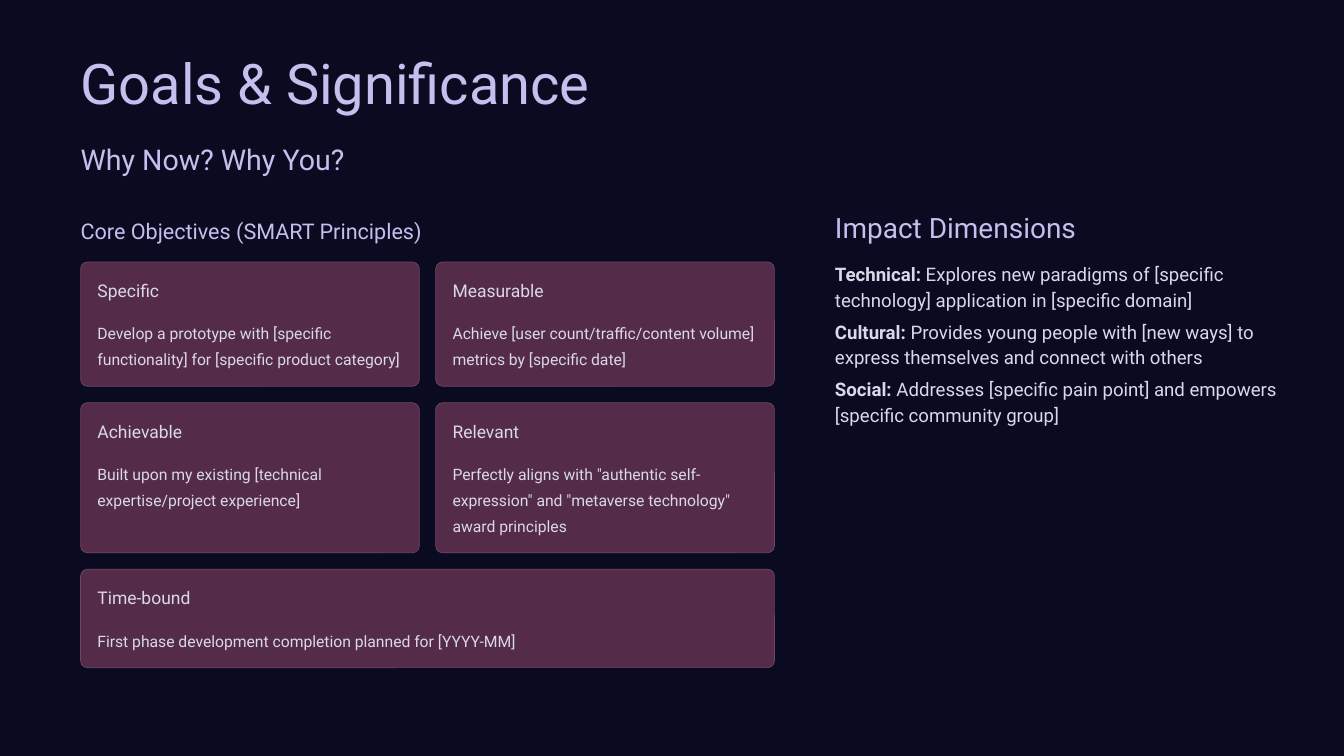
from dataclasses import dataclass

from pptx import Presentation
from pptx.dml.color import RGBColor
from pptx.enum.shapes import MSO_SHAPE
from pptx.enum.text import MSO_ANCHOR, MSO_AUTO_SIZE, PP_ALIGN
from pptx.util import Pt


@dataclass(frozen=True)
class TextStyle:
    size: float
    line: float
    color: RGBColor


@dataclass(frozen=True)
class Theme:
    font = "Roboto"
    background = RGBColor(0x0A, 0x0B, 0x21)
    card_fill = RGBColor(0x54, 0x2C, 0x49)
    card_line = RGBColor(0x6D, 0x45, 0x62)
    accent = RGBColor(0xC6, 0xBF, 0xEE)
    light = RGBColor(0xDA, 0xD8, 0xE9)
    title = TextStyle(48, 38.5, accent)
    subtitle = TextStyle(24.5, 30.5, accent)
    objectives_heading = TextStyle(18.5, 23, accent)
    impact_heading = TextStyle(24, 23, accent)
    card_heading = TextStyle(15, 19, light)
    card_body = TextStyle(13.5, 22, light)
    impact_body = TextStyle(16, 22, light)


THEME = Theme()
LEFT = 69.1
OBJECTIVES_WIDTH = 594.7
CARD_GAP = 14.1
CARD_PADDING = 14.4
CARD_BODY_OFFSET = 47.5
CARD_RADIUS = 5.82
BODY_LINE_HEIGHT = 22.1
CARD_FRAME_HEIGHT = 62.3

OBJECTIVE_ROWS = [
    (2, [
        ("Specific", "Develop a prototype with [specific functionality] for [specific product category]"),
        ("Measurable", "Achieve [user count/traffic/content volume] metrics by [specific date]"),
    ]),
    (3, [
        ("Achievable", "Built upon my existing [technical expertise/project experience]"),
        ("Relevant", 'Perfectly aligns with "authentic self-expression" and "metaverse technology" award principles'),
    ]),
    (1, [("Time-bound", "First phase development completion planned for [YYYY-MM]")]),
]

IMPACTS = [
    ("Technical:", " Explores new paradigms of [specific technology] application in [specific domain]"),
    ("Cultural:", " Provides young people with [new ways] to express themselves and connect with others"),
    ("Social:", " Addresses [specific pain point] and empowers [specific community group]"),
]


def write_paragraphs(shape, paragraphs, style, gap=0):
    frame = shape.text_frame
    frame.word_wrap = True
    frame.auto_size = MSO_AUTO_SIZE.NONE
    frame.vertical_anchor = MSO_ANCHOR.TOP
    frame.margin_left = frame.margin_right = frame.margin_top = frame.margin_bottom = 0
    for index, runs in enumerate(paragraphs):
        paragraph = frame.add_paragraph() if index else frame.paragraphs[0]
        paragraph.alignment = PP_ALIGN.LEFT
        paragraph.line_spacing = Pt(style.line)
        paragraph.space_before = Pt(gap if index else 0)
        for text, bold in runs:
            run = paragraph.add_run()
            run.text = text
            run.font.name = THEME.font
            run.font.size = Pt(style.size)
            run.font.bold = bold
            run.font.color.rgb = style.color


def add_text(slide, left, top, width, height, paragraphs, style, gap=0):
    box = slide.shapes.add_textbox(Pt(left), Pt(top), Pt(width), Pt(height))
    write_paragraphs(box, paragraphs, style, gap)


def add_header(slide, left, top, width):
    title = slide.shapes.title
    title.left, title.top, title.width, title.height = Pt(left), Pt(top), Pt(width), Pt(39)
    write_paragraphs(title, [[("Goals & Significance", False)]], THEME.title)
    add_text(slide, left, top + 59.8, width, 31, [[("Why Now? Why You?", False)]], THEME.subtitle)


def add_card(slide, left, top, width, height, heading, body):
    card = slide.shapes.add_shape(
        MSO_SHAPE.ROUNDED_RECTANGLE, Pt(left), Pt(top), Pt(width), Pt(height)
    )
    card.shadow.inherit = False
    card.adjustments[0] = CARD_RADIUS / height
    card.fill.solid()
    card.fill.fore_color.rgb = THEME.card_fill
    card.line.color.rgb = THEME.card_line
    card.line.width = Pt(0.6)
    text_left = left + CARD_PADDING
    text_width = width - 2 * CARD_PADDING
    body_height = height - CARD_BODY_OFFSET - CARD_PADDING
    add_text(slide, text_left, top + CARD_PADDING, text_width, 19.4,
             [[(heading, False)]], THEME.card_heading)
    add_text(slide, text_left, top + CARD_BODY_OFFSET, text_width, body_height,
             [[(body, False)]], THEME.card_body)


def add_objectives(slide, left, top, width):
    add_text(slide, left, top, width, 23,
             [[("Core Objectives (SMART Principles)", False)]], THEME.objectives_heading)
    row_top = top + 38.8
    for line_count, cards in OBJECTIVE_ROWS:
        height = CARD_FRAME_HEIGHT + line_count * BODY_LINE_HEIGHT
        card_width = (width - CARD_GAP * (len(cards) - 1)) / len(cards)
        for column, (heading, body) in enumerate(cards):
            card_left = left + column * (card_width + CARD_GAP)
            add_card(slide, card_left, row_top, card_width, height, heading, body)
        row_top += height + CARD_GAP


def add_impacts(slide, left, top, width):
    add_text(slide, left, top, width, 23, [[("Impact Dimensions", False)]], THEME.impact_heading)
    paragraphs = [[(label, True), (text, False)] for label, text in IMPACTS]
    add_text(slide, left, top + 36.8, width, 143, paragraphs, THEME.impact_body, gap=5.3)


def main():
    presentation = Presentation()
    presentation.slide_width = Pt(1152)
    presentation.slide_height = Pt(648)
    slide = presentation.slides.add_slide(presentation.slide_layouts[5])
    slide.background.fill.solid()
    slide.background.fill.fore_color.rgb = THEME.background
    add_header(slide, LEFT, 60.5, OBJECTIVES_WIDTH)
    add_objectives(slide, LEFT, 185.8, OBJECTIVES_WIDTH)
    add_impacts(slide, 715.7, 185.8, 385.2)
    presentation.save("out.pptx")


if __name__ == "__main__":
    main()
